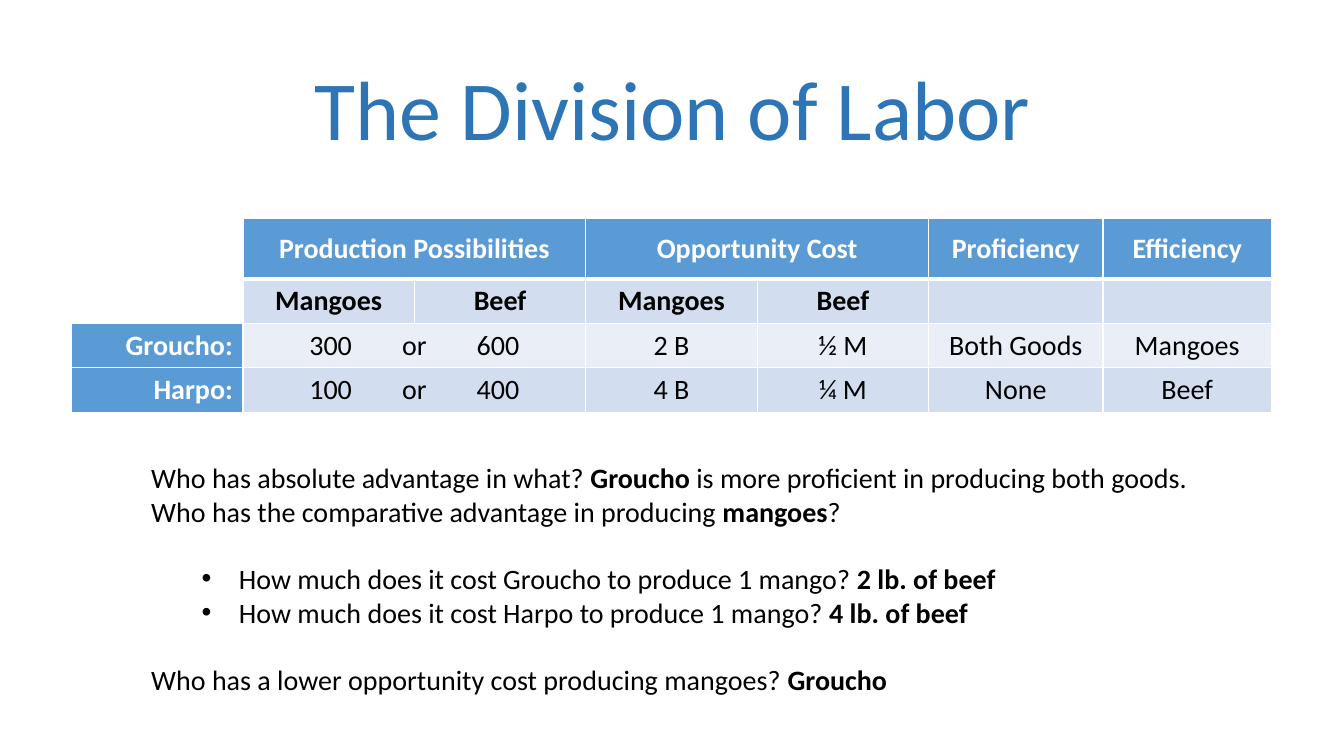
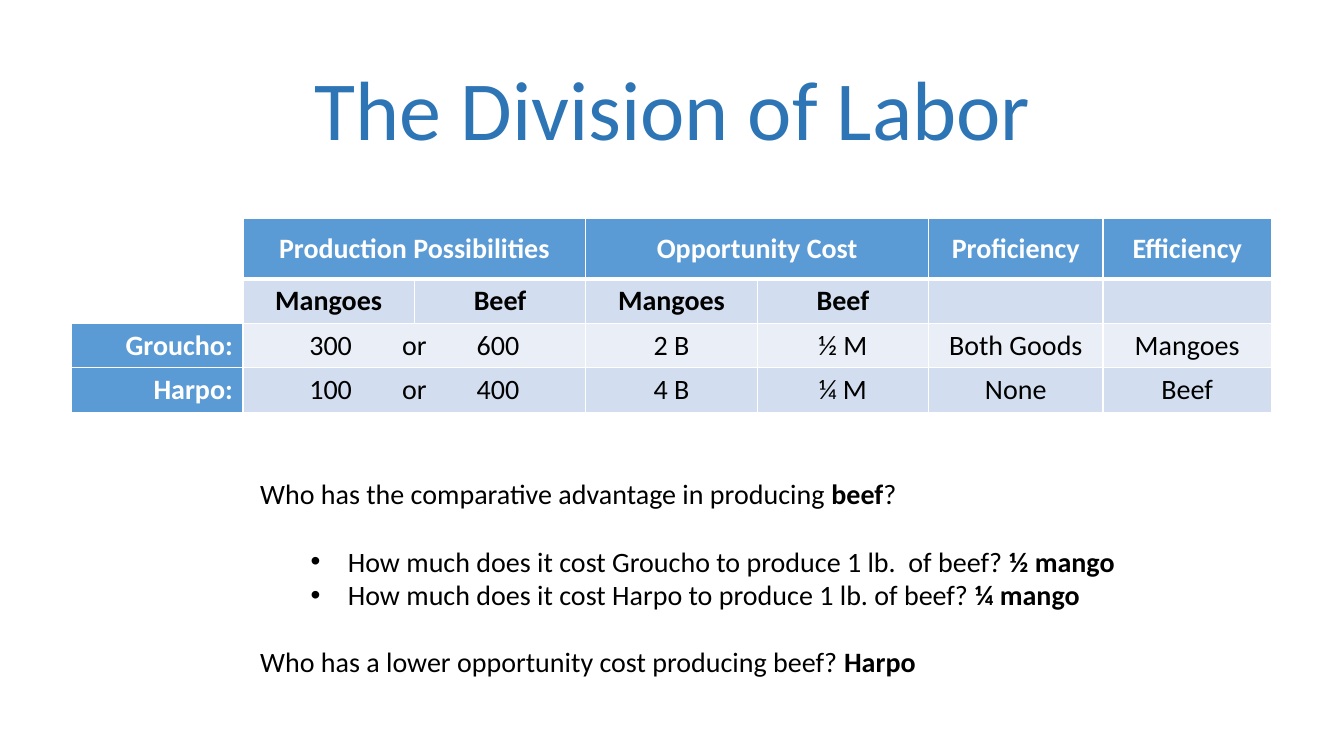
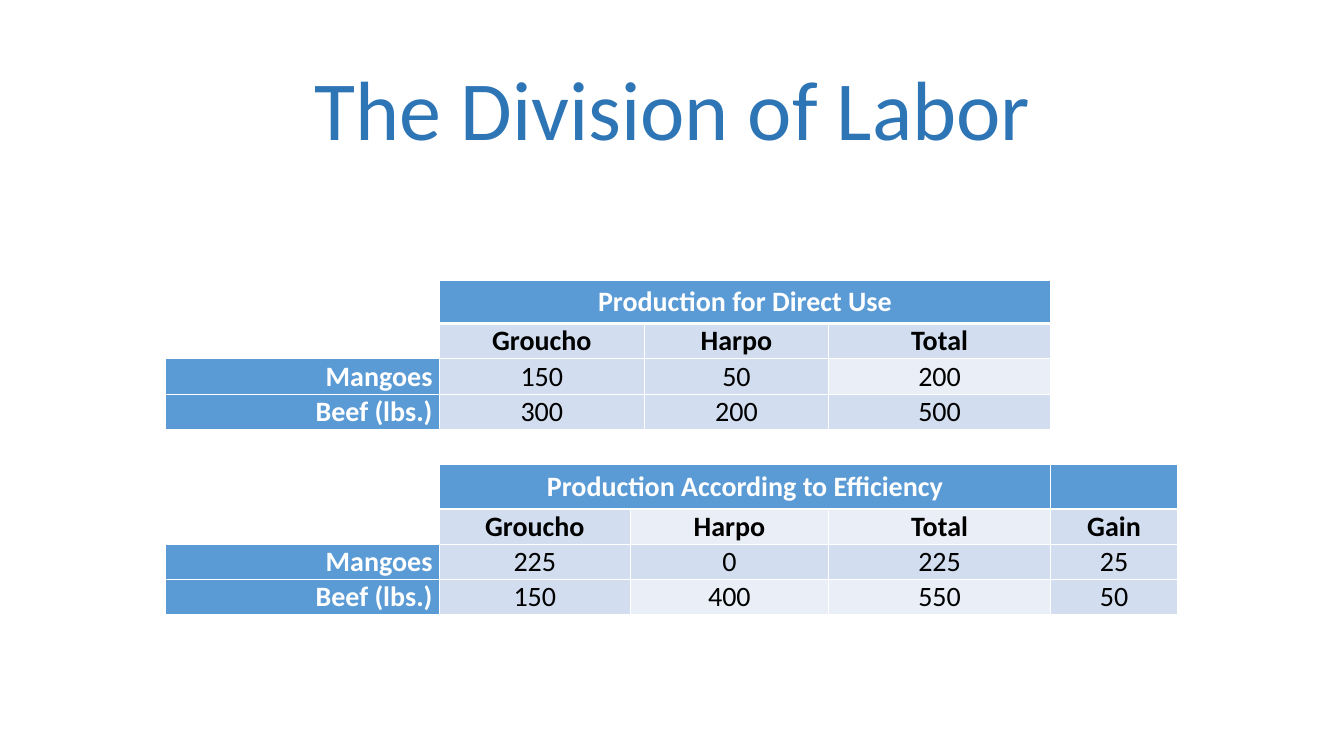
from lxml.etree import SubElement
from pptx import Presentation
from pptx.dml.color import RGBColor
from pptx.enum.text import MSO_ANCHOR as Anchor, MSO_AUTO_SIZE as AutoSize, PP_ALIGN as Align
from pptx.oxml.ns import qn
from pptx.util import Inches, Pt

COLORS = {
    "title": "2E75B6",
    "accent": "5B9BD5",
    "band": "D2DEEF",
    "light": "EAEFF7",
    "white": "FFFFFF",
    "black": "000000",
}
FONT = "Calibri"
CELL_STYLES = {
    "blank": ("white", "black", False, Align.CENTER),
    "head": ("accent", "white", True, Align.CENTER),
    "side": ("accent", "white", True, Align.RIGHT),
    "label": ("band", "black", True, Align.CENTER),
    "pale_label": ("light", "black", True, Align.CENTER),
    "band": ("band", "black", False, Align.CENTER),
    "light": ("light", "black", False, Align.CENTER),
}
MERGED = "<"

LABOR_COLS = [1.7] * 5 + [1.73, 1.67]
LABOR_HEIGHTS = [0.6] + [0.44] * 3
LABOR_ROWS = [
    ("blank head < head < head head",
     ["", "Production Possibilities", "Opportunity Cost", "Proficiency", "Efficiency"]),
    ("blank label label label label label label",
     ["", "Mangoes", "Beef", "Mangoes", "Beef", "", ""]),
    ("side light < light light light light",
     ["Groucho:", "\t300\tor\t600", "2 B", "½ M", "Both Goods", "Mangoes"]),
    ("side band < band band band band",
     ["Harpo:", "\t100\tor\t400", "4 B", "¼ M", "None", "Beef"]),
]
OUTPUT_COLS = [2.72, 1.89, 0.14, 1.83, 2.2, 1.26]
OUTPUT_HEIGHTS = [0.43] + [0.35] * 4 + [0.44] + [0.35] * 3
OUTPUT_ROWS = [
    ("blank head < < < blank", ["", "Production for Direct Use", ""]),
    ("blank label < label label blank", ["", "Groucho", "Harpo", "Total", ""]),
    ("side band < band light blank", ["Mangoes", "150", "50", "200", ""]),
    ("side band < band band blank", ["Beef (lbs.)", "300", "200", "500", ""]),
    ("blank blank < blank blank blank", [""] * 5),
    ("blank head < < < head", ["", "Production According to Efficiency", ""]),
    ("blank label pale_label < pale_label label",
     ["", "Groucho", "Harpo", "Total", "Gain"]),
    ("side band band < band band", ["Mangoes", "225", "0", "225", "25"]),
    ("side band light < light band", ["Beef (lbs.)", "150", "400", "550", "50"]),
]


def rgb(name):
    return RGBColor.from_string(COLORS[name])


def assign(obj, values):
    for name, value in values.items():
        setattr(obj, name, value)


def paint(obj, color):
    obj.fill.solid()
    obj.fill.fore_color.rgb = rgb(color)


def place(shape, box):
    assign(shape, dict(zip(("left", "top", "width", "height"), map(Inches, box))))


def add_run(p, text, size, color, bold=False):
    r = p.add_run()
    r.text = text
    assign(r.font, {"name": FONT, "size": Pt(size), "bold": bold})
    r.font.color.rgb = rgb(color)


def add_slide(prs, layout):
    s = prs.slides.add_slide(prs.slide_layouts[layout])
    title = s.shapes.title
    place(title, (0.92, 0.4, 11.5, 1.45))
    tf = title.text_frame
    assign(tf, {"auto_size": AutoSize.NONE, "vertical_anchor": Anchor.MIDDLE, "word_wrap": True})
    p = tf.paragraphs[0]
    assign(p, {"alignment": Align.CENTER, "line_spacing": 0.9})
    add_run(p, "The Division of Labor", 60, "title")
    return s


def set_borders(cell, row):
    tcPr = cell._tc.get_or_add_tcPr()
    heavy = {(0, "lnB"), (1, "lnT")}
    for side in ("lnL", "lnR", "lnT", "lnB"):
        width = Pt(3 if (row, side) in heavy else 1)
        ln = SubElement(tcPr, qn(f"a:{side}"), w=str(width))
        fill = SubElement(ln, qn("a:solidFill"))
        SubElement(fill, qn("a:srgbClr"), val=COLORS["white"])


def set_center_tabs(p, positions):
    tabs = SubElement(p._p.get_or_add_pPr(), qn("a:tabLst"))
    for position in positions:
        SubElement(tabs, qn("a:tab"), pos=str(Inches(position)), algn="ctr")


def fill_cell(cell, text, style, margin):
    _, color, bold, align = CELL_STYLES[style]
    p = cell.text_frame.paragraphs[0]
    p.alignment = align
    if "\t" in text:
        p.alignment = Align.LEFT
        set_center_tabs(p, (0.77, 1.6, 2.43))
    if text:
        add_run(p, text, 20, color, bold)
    assign(cell, {"vertical_anchor": Anchor.MIDDLE,
                  "margin_left": Inches(margin), "margin_right": Inches(margin),
                  "margin_top": 0, "margin_bottom": 0})


def add_grid(s, left, top, cols, heights, rows, margin):
    frame = s.shapes.add_table(len(heights), len(cols), Inches(left), Inches(top),
                               Inches(sum(cols)), Inches(sum(heights)))
    table = frame.table
    assign(table, {"first_row": False, "horz_banding": False})
    for column, width in zip(table.columns, cols):
        column.width = Inches(width)
    for row, height in zip(table.rows, heights):
        row.height = Inches(height)
    for i, (styles, texts) in enumerate(rows):
        remaining = iter(texts)
        origins = {}
        for j, style in enumerate(styles.split()):
            cell = table.cell(i, j)
            set_borders(cell, i)
            if style != MERGED:
                start, current = j, style
                fill_cell(cell, next(remaining), style, margin)
            paint(cell, CELL_STYLES[current][0])
            origins[start] = j
        for start, end in origins.items():
            if end > start:
                table.cell(i, start).merge(table.cell(i, end))


def set_bullet(p, bulleted):
    pPr = p._p.get_or_add_pPr()
    left, hang = (0.87, -0.37) if bulleted else (0, 0)
    pPr.set("marL", str(Inches(left)))
    pPr.set("indent", str(Inches(hang)))
    if bulleted:
        SubElement(pPr, qn("a:buFont"), typeface="Arial")
        SubElement(pPr, qn("a:buChar"), char="•")
    else:
        SubElement(pPr, qn("a:buNone"))


def add_questions(s, box, intro, costs, closing):
    body = s.placeholders[1]
    place(body, box)
    tf = body.text_frame
    assign(tf, {"auto_size": AutoSize.NONE, "word_wrap": True, "vertical_anchor": Anchor.TOP})
    lines = [(False, 0, runs) for runs in intro]
    lines += [(True, 0 if i else 24, runs) for i, runs in enumerate(costs)]
    lines.append((False, 24, closing))
    for i, (bulleted, gap, runs) in enumerate(lines):
        p = tf.add_paragraph() if i else tf.paragraphs[0]
        assign(p, {"level": int(bulleted), "space_before": Pt(gap), "alignment": Align.LEFT})
        set_bullet(p, bulleted)
        for k, text in enumerate(runs):
            add_run(p, text, 20, "black", k % 2 == 1)


def add_advantage_slide(prs, box, intro, costs, closing):
    s = add_slide(prs, 1)
    paint(s.shapes.title, "white")
    add_grid(s, 0.71, 2.17, LABOR_COLS, LABOR_HEIGHTS, LABOR_ROWS, 0.1)
    add_questions(s, box, intro, costs, closing)


def main():
    prs = Presentation()
    assign(prs, {"slide_width": Inches(13.33), "slide_height": Inches(7.5)})
    add_advantage_slide(
        prs, (1.4, 4.52, 10.55, 2.46),
        [("Who has absolute advantage in what? ", "Groucho",
          " is more proficient in producing both goods."),
         ("Who has the comparative advantage in producing ", "mangoes", "?")],
        [("How much does it cost Groucho to produce 1 mango? ", "2 lb. of beef"),
         ("How much does it cost Harpo to produce 1 mango? ", "4 lb. of beef")],
        ("Who has a lower opportunity cost producing mangoes? ", "Groucho"))
    add_advantage_slide(
        prs, (2.48, 4.68, 10.14, 2.12),
        [("Who has the comparative advantage in producing ", "beef", "?")],
        [("How much does it cost Groucho to produce 1 lb.  of beef? ", "½ mango"),
         ("How much does it cost Harpo to produce 1 lb. of beef? ", "¼ mango")],
        ("Who has a lower opportunity cost producing beef? ", "Harpo"))
    s = add_slide(prs, 5)
    add_grid(s, 1.64, 2.78, OUTPUT_COLS, OUTPUT_HEIGHTS, OUTPUT_ROWS, 0.07)
    prs.save("out.pptx")


if __name__ == "__main__":
    main()
